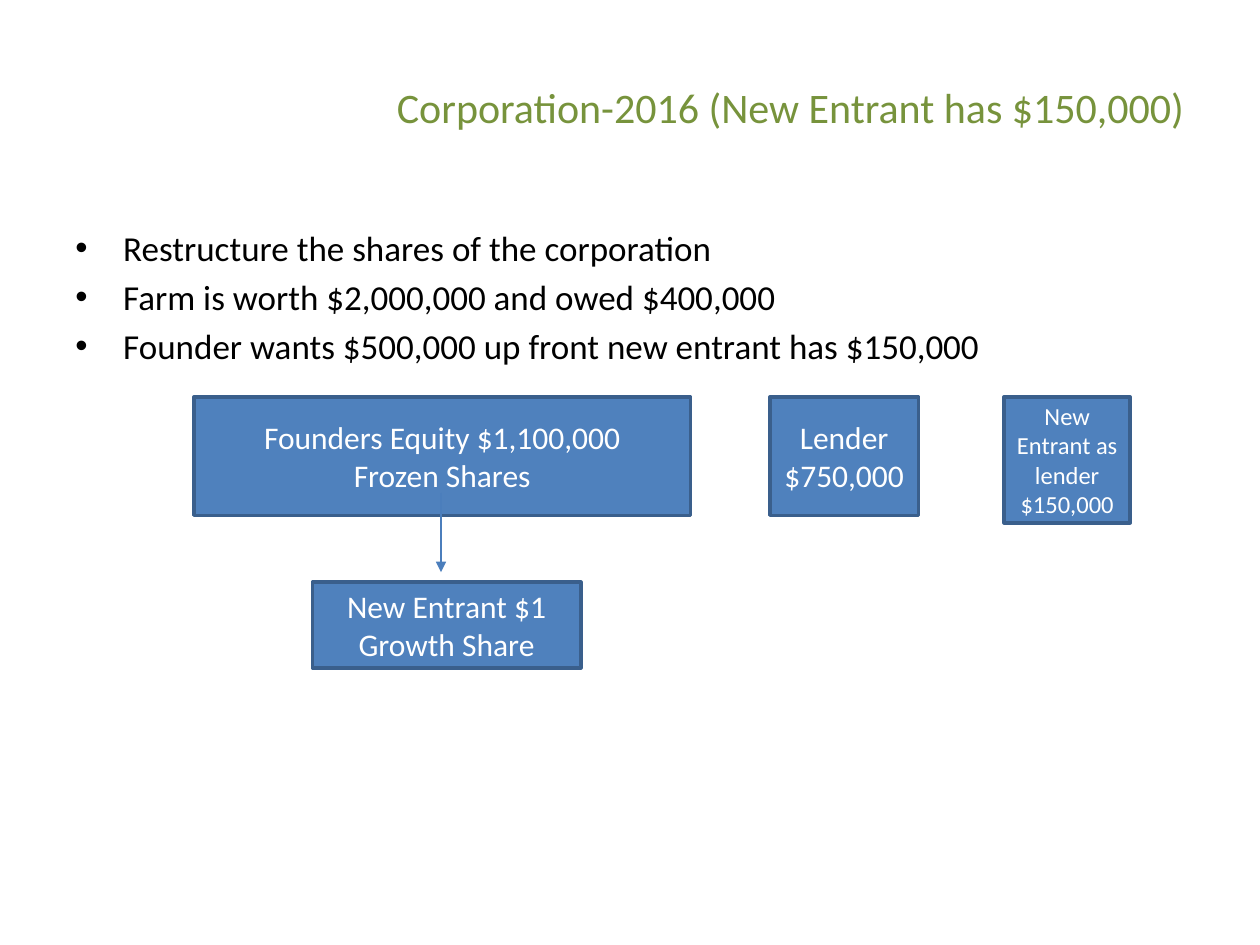
from pptx import Presentation
from pptx.dml.color import RGBColor
from pptx.enum.shapes import MSO_CONNECTOR as Link, MSO_SHAPE as Shape
from pptx.enum.text import MSO_ANCHOR as Anchor, PP_ALIGN as Align
from pptx.oxml.ns import qn
from pptx.util import Inches, Pt
from lxml.etree import SubElement as Sub

TOP = 3.15
TITLE = "Corporation-2016 (New Entrant has $150,000)"
POINTS = [
    "Restructure the shares of the corporation",
    "Farm is worth $2,000,000 and owed $400,000",
    "Founder wants $500,000 up front new entrant has $150,000",
]
BOXES = [
    ("Founders Equity $1,100,000\nFrozen Shares", (1.54, TOP, 3.94, 0.94), 18),
    ("Lender\n$750,000", (6.11, TOP, 1.18, 0.94), 18),
    ("New Entrant $1\nGrowth Share", (2.48, 4.62, 2.13, 0.68), 18),
    ("New Entrant as lender\n$150,000", (7.97, TOP, 1, 1), 14),
]


def color(code):
    return RGBColor.from_string(code)


def write(frame, text, size, code, align, anchor):
    frame.word_wrap = True
    frame.vertical_anchor = anchor
    frame.text = text
    for para in frame.paragraphs:
        para.alignment = align
        for run in para.runs:
            run.font.name = "Calibri"
            run.font.size = Pt(size)
            run.font.color.rgb = color(code)


def add_text(slide, text, place, *style):
    frame = slide.shapes.add_textbox(*map(Inches, place)).text_frame
    write(frame, text, *style)
    return frame


def add_list(slide, items, place):
    frame = add_text(slide, "\n".join(items), place, 20, "000000", Align.LEFT, Anchor.TOP)
    for i, para in enumerate(frame.paragraphs):
        para.space_before = Pt(4 if i else 0)
        props = para._p.get_or_add_pPr()
        props.set("marL", str(Inches(0.38)))
        props.set("indent", str(Inches(-0.38)))
        Sub(props, qn("a:buFont"), typeface="Arial")
        Sub(props, qn("a:buChar"), char="•")


def add_box(slide, text, place, size):
    box = slide.shapes.add_shape(Shape.RECTANGLE, *map(Inches, place))
    box.shadow.inherit = False
    box.fill.solid()
    box.fill.fore_color.rgb = color("4F81BD")
    box.line.color.rgb = color("3A5F8C")
    box.line.width = Pt(2)
    write(box.text_frame, text, size, "FFFFFF", Align.CENTER, Anchor.MIDDLE)


def add_arrow(slide, *ends):
    arrow = slide.shapes.add_connector(Link.STRAIGHT, *map(Inches, ends))
    arrow.line.color.rgb = color("4B7EBC")
    arrow.line.width = Pt(0.75)
    Sub(arrow.line._get_or_add_ln(), qn("a:tailEnd"), type="triangle")
    Sub(arrow._element.spPr, qn("a:effectLst"))


def main():
    deck = Presentation()
    deck.slide_width, deck.slide_height = Inches(10), Inches(7.5)
    slide = deck.slides.add_slide(deck.slide_layouts[6])
    add_text(slide, TITLE, (0.5, 0.3, 9, 1.09), 24, "77933C", Align.RIGHT, Anchor.MIDDLE)
    add_list(slide, POINTS, (0.5, 1.75, 9, 4.95))
    for box in BOXES:
        add_box(slide, *box)
    add_arrow(slide, 3.5, 3.91, 3.5, 4.54)
    deck.save("out.pptx")


if __name__ == "__main__":
    main()
